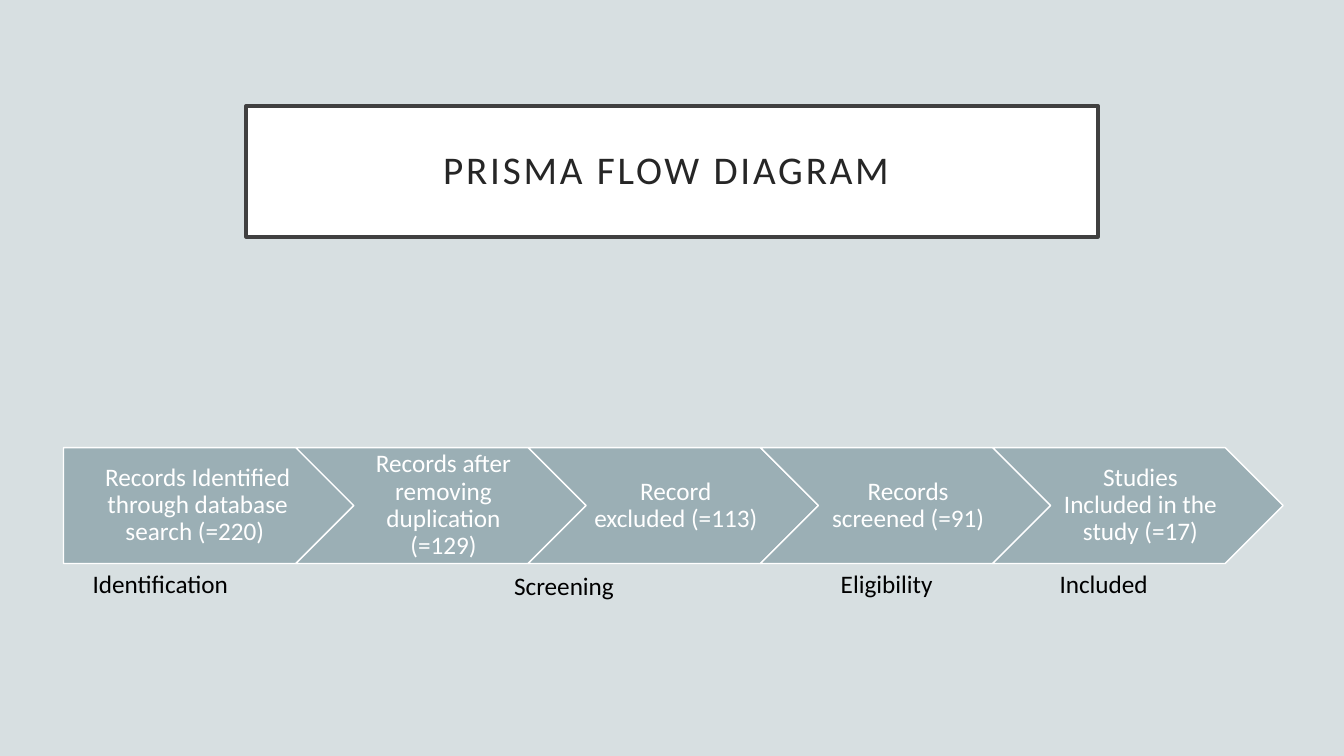
"""Build a slide with a PRISMA flow of five chevron steps and their phases."""
from pptx import Presentation
from pptx.dml.color import RGBColor
from pptx.enum.shapes import MSO_SHAPE
from pptx.enum.text import MSO_ANCHOR, PP_ALIGN
from pptx.util import Inches, Pt

RECTANGLE, PENTAGON, CHEVRON = MSO_SHAPE.RECTANGLE, MSO_SHAPE.PENTAGON, MSO_SHAPE.CHEVRON
MIDDLE, TOP = MSO_ANCHOR.MIDDLE, MSO_ANCHOR.TOP
CENTER, LEFT = PP_ALIGN.CENTER, PP_ALIGN.LEFT


def color(hex_string):
    return RGBColor.from_string(hex_string)


def write(shape, text, size, text_color, margins, anchor=MIDDLE, align=CENTER, spacing=0.9):
    frame = shape.text_frame
    left, top, right, bottom = (Inches(margin) for margin in margins)
    frame_format = {
        "word_wrap": True, "vertical_anchor": anchor, "margin_left": left,
        "margin_top": top, "margin_right": right, "margin_bottom": bottom,
    }
    for name, value in frame_format.items():
        setattr(frame, name, value)
    paragraph = frame.paragraphs[0]
    paragraph.alignment = align
    paragraph.line_spacing = spacing
    run = paragraph.add_run()
    run.text = text
    for name, value in {"name": "Calibri", "size": Pt(size)}.items():
        setattr(run.font, name, value)
    run.font.color.rgb = color(text_color)
    return run


presentation = Presentation()
presentation.slide_width = Inches(13.33)
presentation.slide_height = Inches(7.5)
slide = presentation.slides.add_slide(presentation.slide_layouts[6])
slide.background.fill.solid()
slide.background.fill.fore_color.rgb = color("D7DFE1")

step_texts = [
    "Records Identified through database search (=220) ",
    "Records after removing duplication (=129)",
    "Record excluded (=113) ",
    "Records screened (=91)",
    "Studies Included in the study (=17)",
]
step_width, step_height = 2.88, 1.15
step_pitch = step_width * 0.8

boxes = [(RECTANGLE, (2.44, 1.05, 8.45, 1.3), "FFFFFF", "404040", 2.5,
          ("PRISMA FLOW DIAGRAM ", 28, "262626", (0.2, 0.2, 0.2, 0.2)))]
for index, text in enumerate(step_texts):
    kind, left_margin = (CHEVRON, 0.08) if index else (PENTAGON, 0.1)
    place = (0.63 + index * step_pitch, 4.44, step_width, step_height)
    boxes.append((kind, place, "9BAFB5", "FFFFFF", 1,
                  (text, 18, "FFFFFF", (left_margin, 0.05, 0.03, 0.05))))

for kind, place, fill, line, line_width, content in boxes:
    shape = slide.shapes.add_shape(kind, *(Inches(length) for length in place))
    shape.shadow.inherit = False
    shape.fill.solid()
    shape.fill.fore_color.rgb = color(fill)
    shape.line.color.rgb = color(line)
    shape.line.width = Pt(line_width)
    run = write(shape, *content)
    if kind == RECTANGLE:
        run.font._element.set("spc", "200")

phases = [
    ("Identification", 0.82, 5.59, 2.08),
    ("Screening", 5, 5.61, 2.78),
    ("Eligibility", 8.24, 5.59, 1.73),
    ("Included", 10.41, 5.59, 1.91),
]
for phase, left, top, width in phases:
    label = slide.shapes.add_textbox(Inches(left), Inches(top), Inches(width), Inches(0.4))
    write(label, phase, 18, "000000", (0.1, 0.05, 0.1, 0.05), TOP, LEFT, 1.0)

presentation.save("out.pptx")
